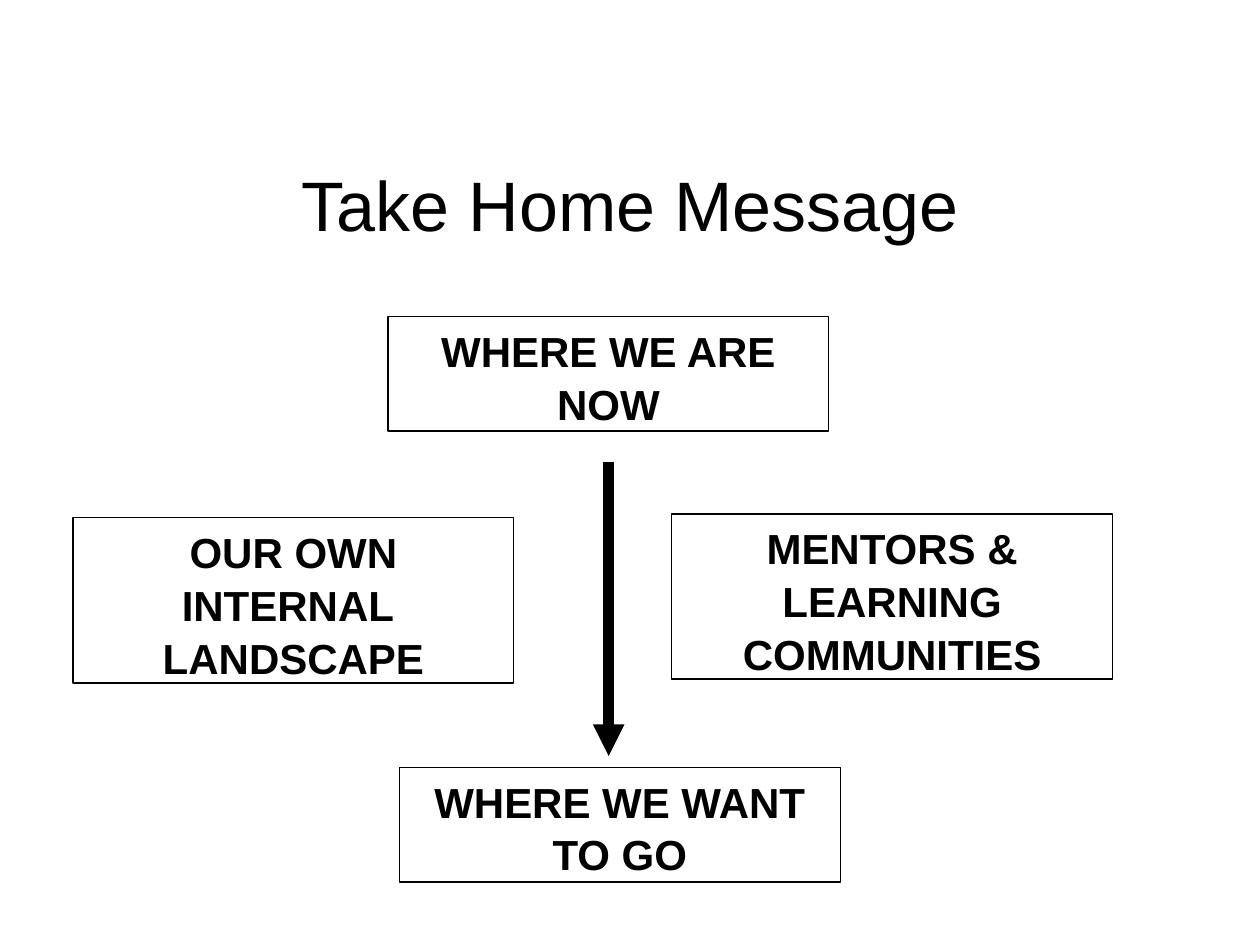
import pptx
import pptx.dml.color
import pptx.enum.shapes
import pptx.enum.text
import pptx.util
from lxml import etree
from pptx.util import Cm

INK = "000000"
WIDE = 8.89


def color(code):
    """Turn a hex string into a colour."""
    return pptx.dml.color.RGBColor.from_string(code)


def write(frame, lines, size, bold=False, lead=None):
    """Fill a text frame with centred paragraphs."""
    frame.word_wrap = True
    frame.text = "\n".join(lines)
    for par in frame.paragraphs:
        par.alignment = pptx.enum.text.PP_ALIGN.CENTER
        par.line_spacing = lead
        par.font.name = "Arial"
        par.font.size = pptx.util.Pt(size)
        par.font.bold = bold
        par.font.color.rgb = color(INK)


def title(slide, text):
    """Add the heading."""
    box = slide.shapes.add_textbox(Cm(1.27), Cm(2.97), Cm(22.86), Cm(2.74))
    box.text_frame.margin_top = Cm(0.28)
    write(box.text_frame, [text], 40)


def panel(slide, left, top, high, lines):
    """Add an outlined box with bold text."""
    box = slide.shapes.add_shape(
        pptx.enum.shapes.MSO_SHAPE.RECTANGLE,
        Cm(left), Cm(top), Cm(WIDE), Cm(high))
    box.shadow.inherit = False
    box.fill.background()
    box.line.color.rgb = color(INK)
    box.line.width = pptx.util.Pt(0.75)
    write(box.text_frame, lines, 24, True, 1.05)
    box.text_frame.vertical_anchor = pptx.enum.text.MSO_ANCHOR.TOP
    box.text_frame.auto_size = pptx.enum.text.MSO_AUTO_SIZE.SHAPE_TO_FIT_TEXT


def arrow(slide, left, top, end):
    """Add a thick arrow that points down."""
    line = slide.shapes.add_connector(
        pptx.enum.shapes.MSO_CONNECTOR.STRAIGHT,
        Cm(left), Cm(top), Cm(left), Cm(end))
    line.line.color.rgb = color(INK)
    line.line.width = pptx.util.Pt(6)
    space = pptx.oxml.ns.qn
    etree.SubElement(line.line._get_or_add_ln(), space("a:tailEnd"), type="triangle")
    etree.SubElement(line._element.spPr, space("a:effectLst"))


def main():
    """Build the slide and save it."""
    deck = pptx.Presentation()
    deck.slide_width, deck.slide_height = Cm(25.4), Cm(19.05)
    slide = deck.slides.add_slide(deck.slide_layouts[6])
    title(slide, "Take Home Message")
    low, high = 2.31, 3.33
    for left, top, tall, lines in (
        (1.47, 10.44, high, ["OUR OWN INTERNAL ", "LANDSCAPE"]),
        (13.54, 10.36, high, ["MENTORS & LEARNING COMMUNITIES"]),
        (8.05, 15.47, low, ["WHERE WE WANT TO GO"]),
        (7.82, 6.38, low, ["WHERE WE ARE", "NOW"]),
    ):
        panel(slide, left, top, tall, lines)
    arrow(slide, 12.27, 9.32, 15.24)
    deck.save("out.pptx")


if __name__ == "__main__":
    main()
